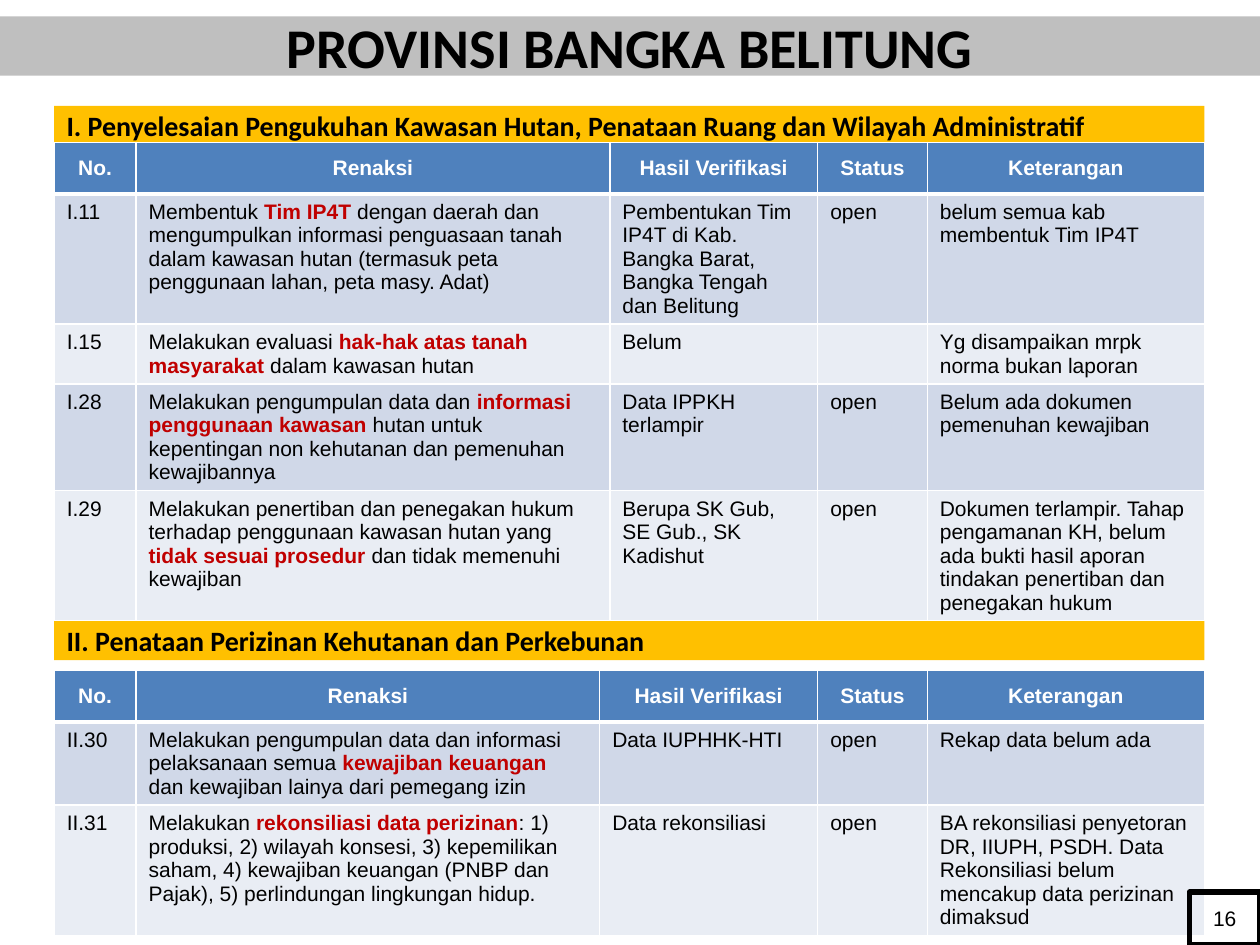
import pptx
import pptx.dml.color
import pptx.enum.shapes
import pptx.enum.text
import pptx.oxml.ns
import pptx.util
from lxml import etree

Inches = pptx.util.Inches
Pt = pptx.util.Pt
ALIGN = pptx.enum.text.PP_ALIGN
MIDDLE = pptx.enum.text.MSO_ANCHOR.MIDDLE

COLORS = {
    "black": "000000",
    "white": "FFFFFF",
    "header": "4F81BD",
    "odd_row": "D0D8E8",
    "even_row": "E9EDF4",
    "highlight": "C00000",
    "section": "FFC000",
    "title": "BFBFBF",
}
LEFT, WIDTH = 0.43, 9.13
HEADER = ["No.", "Renaksi", "Hasil Verifikasi", "Status", "Keterangan"]

FOREST_ACTIONS = [
    ["I.11",
     "Membentuk **Tim IP4T **dengan daerah dan mengumpulkan informasi penguasaan tanah "
     "dalam kawasan hutan (termasuk peta penggunaan lahan, peta masy. Adat)",
     "Pembentukan Tim IP4T di Kab. Bangka Barat, Bangka Tengah dan Belitung",
     "open", "belum semua kab membentuk Tim IP4T"],
    ["I.15",
     "Melakukan evaluasi **hak-hak atas tanah masyarakat **dalam kawasan hutan",
     "Belum", "", "Yg disampaikan mrpk norma bukan laporan"],
    ["I.28",
     "Melakukan pengumpulan data dan **informasi penggunaan kawasan **hutan untuk "
     "kepentingan non kehutanan dan pemenuhan kewajibannya",
     "Data IPPKH terlampir", "open", "Belum ada dokumen pemenuhan kewajiban"],
    ["I.29",
     "Melakukan penertiban dan penegakan hukum terhadap penggunaan kawasan hutan yang "
     "**tidak sesuai prosedur **dan tidak memenuhi kewajiban",
     "Berupa SK Gub, SE Gub., SK Kadishut", "open",
     "Dokumen terlampir. Tahap pengamanan KH, belum ada bukti hasil aporan "
     "tindakan penertiban dan penegakan hukum"],
]
PERMIT_ACTIONS = [
    ["II.30",
     "Melakukan pengumpulan data dan informasi pelaksanaan semua **kewajiban keuangan "
     "**dan kewajiban lainya dari pemegang izin",
     "Data IUPHHK-HTI", "open", "Rekap data belum ada"],
    ["II.31",
     "Melakukan **rekonsiliasi data perizinan**: 1) produksi, 2) wilayah konsesi, "
     "3) kepemilikan saham, 4) kewajiban keuangan (PNBP dan Pajak), "
     "5) perlindungan lingkungan hidup.",
     "Data rekonsiliasi", "open",
     "BA rekonsiliasi penyetoran DR, IIUPH, PSDH. Data Rekonsiliasi belum mencakup "
     "data perizinan dimaksud"],
]


def rgb(name):
    return pptx.dml.color.RGBColor.from_string(COLORS[name])


def style_font(font, face, size, color, bold):
    font.name = face
    font.size = Pt(size)
    font.color.rgb = rgb(color)
    font.bold = bold


def add_box(slide, box, text, face, size, bold=True, fill=None, line=None, align=ALIGN.LEFT):
    bar = slide.shapes.add_shape(
        pptx.enum.shapes.MSO_SHAPE.RECTANGLE, *(Inches(length) for length in box))
    bar.shadow.inherit = False
    if fill:
        bar.fill.solid()
        bar.fill.fore_color.rgb = rgb(fill)
    else:
        bar.fill.background()
    if line:
        bar.line.color.rgb = rgb(line)
        bar.line.width = Pt(3)
    else:
        bar.line.fill.background()
    frame = bar.text_frame
    frame.text = text
    frame.word_wrap = True
    frame.vertical_anchor = MIDDLE
    paragraph = frame.paragraphs[0]
    paragraph.alignment = align
    style_font(paragraph.runs[0].font, face, size, "black", bold)


def add_section(slide, top, text):
    add_box(slide, (LEFT, top, WIDTH, 0.31), text, "Calibri", 16, fill="section")


def set_borders(cell, bottom_width):
    properties = cell._tc.get_or_add_tcPr()
    widths = {"a:lnL": 1, "a:lnR": 1, "a:lnT": 1, "a:lnB": bottom_width}
    for position, (tag, width) in enumerate(widths.items()):
        border = etree.Element(pptx.oxml.ns.qn(tag), w=str(Pt(width)))
        fill = etree.SubElement(border, pptx.oxml.ns.qn("a:solidFill"))
        etree.SubElement(fill, pptx.oxml.ns.qn("a:srgbClr"), val=COLORS["white"])
        properties.insert(position, border)


def fill_cell(cell, text, fill, is_header):
    cell.fill.solid()
    cell.fill.fore_color.rgb = rgb(fill)
    set_borders(cell, 3 if is_header else 1)
    paragraph = cell.text_frame.paragraphs[0]
    if is_header:
        cell.vertical_anchor = MIDDLE
        paragraph.alignment = ALIGN.CENTER
    if not text:
        style_font(paragraph.font, "Arial", 12, "black", False)
    for index, part in enumerate(text.split("**")):
        if part:
            run = paragraph.add_run()
            run.text = part
            highlighted = index % 2 == 1
            color = "white" if is_header else "highlight" if highlighted else "black"
            style_font(run.font, "Arial", 12, color, is_header or highlighted)


def add_action_table(slide, top, height, widths, heights, actions):
    rows = [HEADER] + actions
    frame = slide.shapes.add_table(
        len(rows), len(HEADER), Inches(LEFT), Inches(top), Inches(WIDTH), Inches(height))
    table = frame.table
    for column, width in zip(table.columns, widths):
        column.width = Inches(width)
    for row, row_height in zip(table.rows, heights):
        row.height = Inches(row_height)
    frame.height = Inches(height)
    for row_index, texts in enumerate(rows):
        is_header = row_index == 0
        fill = "header" if is_header else "odd_row" if row_index % 2 else "even_row"
        for column_index, text in enumerate(texts):
            fill_cell(table.cell(row_index, column_index), text, fill, is_header)


def main():
    deck = pptx.Presentation()
    deck.slide_width = Inches(10)
    deck.slide_height = Inches(7.5)
    slide = deck.slides.add_slide(deck.slide_layouts[6])

    add_action_table(slide, 5.32, 2.01, [0.65, 3.68, 1.73, 0.87, 2.2],
                     [0.41, 0.52, 0.45], PERMIT_ACTIONS)
    add_section(slide, 0.84,
                "I. Penyelesaian Pengukuhan Kawasan Hutan, Penataan Ruang dan Wilayah Administratif")
    add_action_table(slide, 1.13, 3.61, [0.65, 3.76, 1.65, 0.87, 2.2],
                     [0.41, 0.68, 0.45, 0.66, 0.75], FOREST_ACTIONS)
    add_box(slide, (9.44, 7.08, 0.56, 0.42), "16", "Arial", 12, bold=False,
            line="black", align=ALIGN.CENTER)
    add_box(slide, (0, 0.13, 10, 0.47), "PROVINSI BANGKA BELITUNG", "Calibri", 32,
            fill="title", align=ALIGN.CENTER)
    add_section(slide, 4.93, "II. Penataan Perizinan Kehutanan dan Perkebunan")

    deck.save("out.pptx")


if __name__ == "__main__":
    main()
